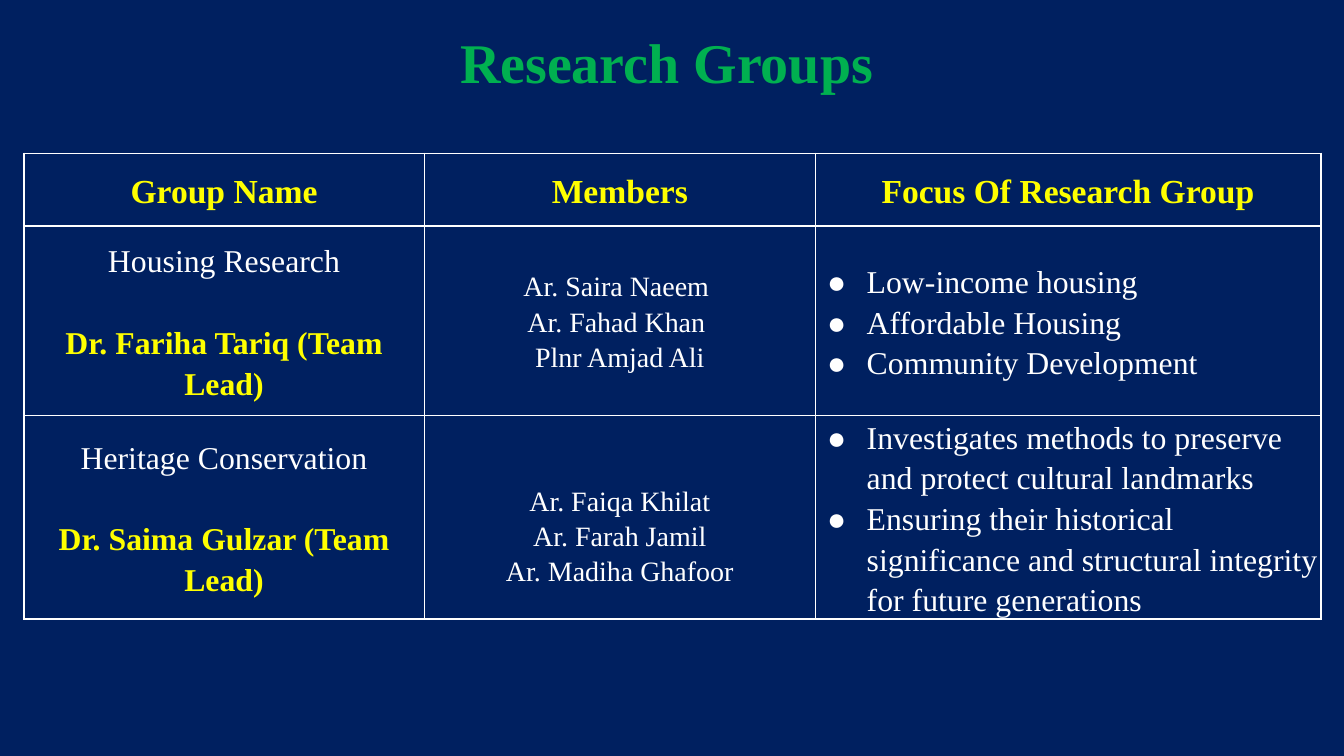
import pptx
import pptx.dml.color
import pptx.enum.text
import pptx.oxml
import pptx.oxml.ns
import pptx.util
from pptx.util import Cm

COLORS = {"navy": "002060", "white": "FFFFFF", "yellow": "FFFF00", "green": "00B050"}
HEADINGS = ["Group Name", "Members", "Focus Of Research Group"]
# Research area, team lead, members, gap above the members, focus points
GROUPS = [
    ("Housing Research", "Dr. Fariha Tariq (Team Lead)",
     ["Ar. Saira Naeem ", "Ar. Fahad Khan ", "Plnr Amjad Ali"], Cm(0),
     ["Low-income housing", "Affordable Housing", "Community Development"]),
    ("Heritage Conservation", "Dr. Saima Gulzar (Team Lead)",
     ["Ar. Faiqa Khilat", "Ar. Farah Jamil", "Ar. Madiha Ghafoor"], Cm(0.67),
     ["Investigates methods to preserve and protect cultural landmarks",
      "Ensuring their historical significance and structural integrity "
      "for future generations"]),
]


class SlideBuilder:
    """Holds the style and the slide being filled."""

    font = "Times New Roman"
    line_spacing = 1.15
    center = pptx.enum.text.PP_ALIGN.CENTER
    left = pptx.enum.text.PP_ALIGN.LEFT
    middle = pptx.enum.text.MSO_ANCHOR.MIDDLE

    def __init__(self, slide):
        self.slide = slide
        background = slide.background.fill
        background.solid()
        background.fore_color.rgb = self.color("navy")

    def color(self, name):
        return pptx.dml.color.RGBColor.from_string(COLORS[name])

    def add_text(self, paragraph, text, size, color="white", bold=False, align=None):
        paragraph.alignment = align or self.center
        paragraph.line_spacing = self.line_spacing
        run = paragraph.add_run()
        run.text = text
        run.font.name = self.font
        run.font.size = pptx.util.Pt(size)
        run.font.bold = bold
        run.font.color.rgb = self.color(color)

    def title(self, text):
        heading = self.slide.shapes.title
        heading.left, heading.top = Cm(0), Cm(0)
        heading.width, heading.height = Cm(24.94), Cm(2.49)
        frame = heading.text_frame
        frame.auto_size = pptx.enum.text.MSO_AUTO_SIZE.NONE
        frame.vertical_anchor = self.middle
        frame.margin_left = frame.margin_right = Cm(0.18)
        frame.margin_top = frame.margin_bottom = Cm(0.1)
        self.add_text(frame.paragraphs[0], text, 30, "green", True)
        frame.paragraphs[0].line_spacing = 0.9

    def table(self, left, top, widths, heights):
        grid = self.slide.shapes.add_table(
            len(heights), len(widths), left, top, sum(widths), sum(heights)).table
        grid.first_row = grid.horz_banding = False
        for column, width in zip(grid.columns, widths):
            column.width = width
        for row, height in zip(grid.rows, heights):
            row.height = height
        for cell in grid.iter_cells():
            cell.vertical_anchor = self.middle
            cell.margin_left = cell.margin_right = Cm(0)
            cell.margin_top = cell.margin_bottom = Cm(0)
            self.borders(cell)
            cell.fill.solid()
            cell.fill.fore_color.rgb = self.color("navy")
        return grid

    def borders(self, cell):
        properties = cell._tc.get_or_add_tcPr()
        for side in ("lnL", "lnR", "lnT", "lnB"):
            properties.append(pptx.oxml.parse_xml(
                f'<a:{side} {pptx.oxml.ns.nsdecls("a")} w="{pptx.util.Pt(1)}">'
                f'<a:solidFill><a:srgbClr val="{COLORS["white"]}"/></a:solidFill>'
                f'</a:{side}>'))

    def lines(self, cell, texts, size, align=None):
        """Add one paragraph per text and return the paragraphs."""
        frame = cell.text_frame
        for index, text in enumerate(texts):
            paragraph = frame.add_paragraph() if index else frame.paragraphs[0]
            self.add_text(paragraph, text, size, align=align)
        return frame.paragraphs

    def bullets(self, cell, texts):
        namespace = pptx.oxml.ns.nsdecls("a")
        for paragraph in self.lines(cell, texts, 17, self.left):
            properties = paragraph._p.get_or_add_pPr()
            properties.set("marL", str(Cm(0.97)))
            properties.set("indent", str(Cm(-0.75)))
            for bullet in (
                    f'<a:buClr {namespace}><a:srgbClr val="{COLORS["white"]}"/></a:buClr>',
                    f'<a:buFont {namespace} typeface="{self.font}"/>',
                    f'<a:buChar {namespace} char="●"/>'):
                properties.append(pptx.oxml.parse_xml(bullet))

    def group_name(self, cell, area, lead):
        self.lines(cell, [area], 17)
        lead_line = cell.text_frame.add_paragraph()
        self.add_text(lead_line, lead, 17, "yellow", True)
        lead_line.space_before = pptx.util.Pt(21.8)


def main():
    presentation = pptx.Presentation()
    presentation.slide_width, presentation.slide_height = Cm(25.4), Cm(14.29)
    title_only = presentation.slide_layouts[5]
    builder = SlideBuilder(presentation.slides.add_slide(title_only))

    groups_table = builder.table(
        Cm(0.45), Cm(2.9),
        widths=[Cm(7.57), Cm(7.39), Cm(9.55)],
        heights=[Cm(1.37), Cm(3.58), Cm(3.84)])
    for column, heading in enumerate(HEADINGS):
        heading_line = groups_table.cell(0, column).text_frame.paragraphs[0]
        builder.add_text(heading_line, heading, 18, "yellow", True)
    for row, (area, lead, members, gap, focus) in enumerate(GROUPS, start=1):
        builder.group_name(groups_table.cell(row, 0), area, lead)
        members_cell = groups_table.cell(row, 1)
        members_cell.margin_top = gap
        builder.lines(members_cell, members, 15)
        builder.bullets(groups_table.cell(row, 2), focus)

    builder.title(" Research Groups")
    presentation.save("out.pptx")


if __name__ == "__main__":
    main()
